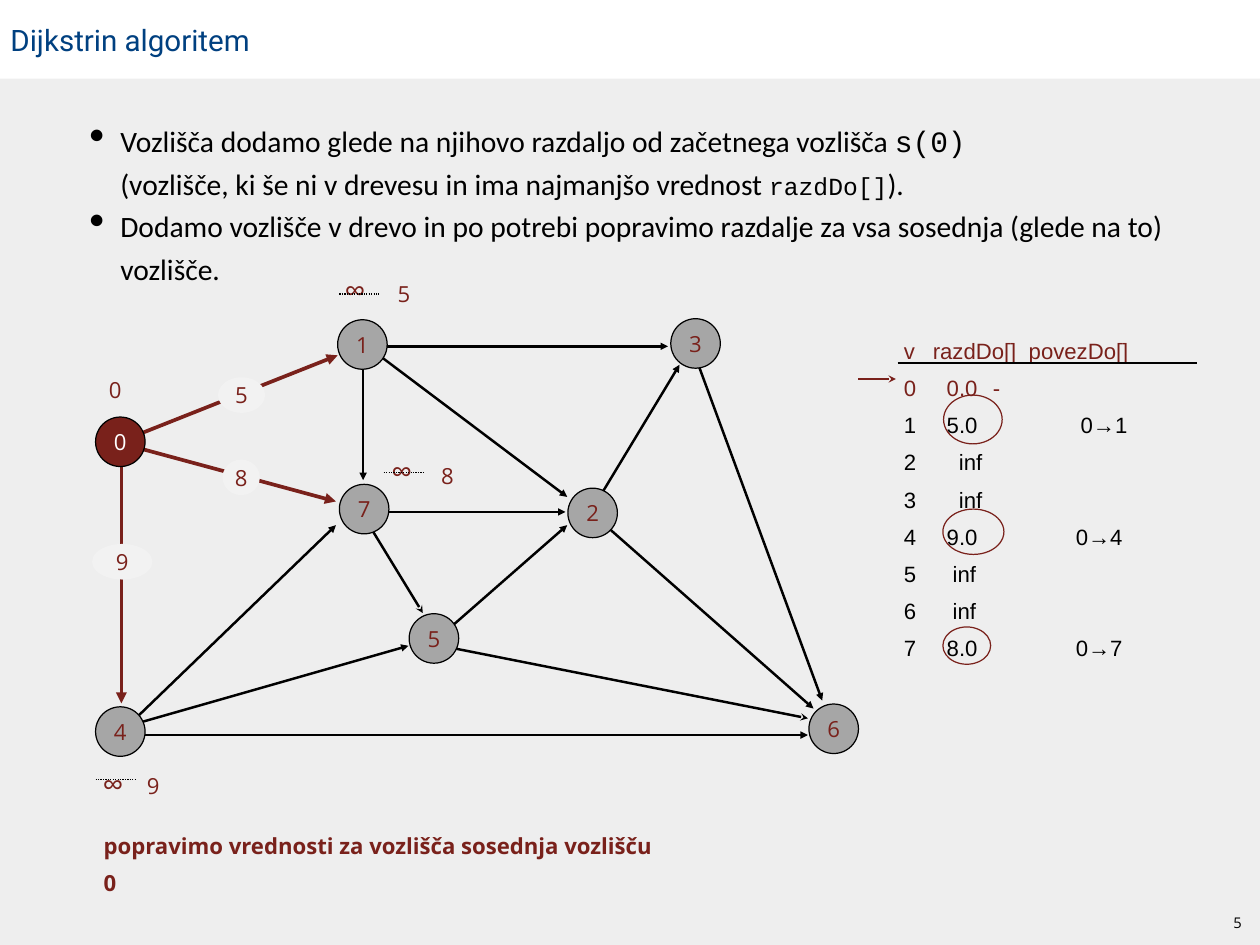
"""Build the slide on Dijkstra's algorithm: the graph, its distances and the table."""
from lxml import etree
from pptx import Presentation
from pptx.dml.color import RGBColor
from pptx.enum.dml import MSO_LINE
from pptx.enum.shapes import MSO_CONNECTOR, MSO_SHAPE
from pptx.enum.text import MSO_ANCHOR, PP_ALIGN
from pptx.oxml.ns import qn
from pptx.util import Cm, Pt

STRAIGHT = MSO_CONNECTOR.STRAIGHT
RECTANGLE, OVAL = MSO_SHAPE.RECTANGLE, MSO_SHAPE.OVAL
TOP, MIDDLE = MSO_ANCHOR.TOP, MSO_ANCHOR.MIDDLE
LEFT, CENTER = PP_ALIGN.LEFT, PP_ALIGN.CENTER
DOTTED = MSO_LINE.ROUND_DOT

BLACK = RGBColor(0x00, 0x00, 0x00)
WHITE = RGBColor(0xFF, 0xFF, 0xFF)
PAPER = RGBColor(0xEE, 0xEE, 0xEE)
PALE = RGBColor(0xF2, 0xF2, 0xF2)
GREY = RGBColor(0xA6, 0xA6, 0xA6)
RED = RGBColor(0x79, 0x21, 0x1B)
BLUE = RGBColor(0x00, 0x40, 0x80)

SANS, TITLE_FONT, BODY, CODE, TABLE_FONT = (
    "Open Sans", "Roboto", "Calibri", "Courier New", "Arial")
WIDTH, HEIGHT = 36.12, 27.1
PAD = 0.15
NODE_SIZE = 1.42
WEIGHT_HEIGHT = 1.02
STRIKE_LENGTH = 1.14

TITLE = "Dijkstrin algoritem"
BULLETS = [
    [("Vozlišča dodamo glede na njihovo razdaljo od začetnega vozlišča ", BODY, 24),
     ("s(0)", CODE, 24),
     None,
     ("(vozlišče, ki še ni v drevesu in ima najmanjšo vrednost ", BODY, 24),
     ("razdDo[]", CODE, 20),
     (").", BODY, 24)],
    [("Dodamo vozlišče v drevo in po potrebi popravimo razdalje za vsa "
      "sosednja (glede na to) vozlišče.", BODY, 24)],
]
CAPTION = "popravimo vrednosti za vozlišča sosednja vozlišču 0"
PAGE_NUMBER = "5"

NODES = {
    "4": (2.74, 20.27), "7": (9.73, 13.89), "1": (9.68, 9.17), "3": (19.23, 9.14),
    "5": (11.73, 17.6), "2": (16.28, 14.0), "6": (23.19, 20.19), "0": (2.74, 11.96),
}
START_NODE = "0"
EDGES = [
    (12.75, 18.54, 23.16, 20.6, "stealth"),
    (3.58, 20.9, 9.63, 15.06, "triangle"),
    (10.29, 14.68, 16.21, 14.68, "triangle"),
    (10.41, 9.86, 10.41, 13.77, "triangle"),
    (19.89, 10.11, 23.57, 20.09, "triangle"),
    (16.81, 14.88, 19.48, 10.46, "triangle"),
    (17.35, 15.06, 23.32, 20.32, "triangle"),
    (3.45, 21.08, 23.16, 21.08, "triangle"),
    (10.59, 9.98, 16.26, 14.25, "triangle"),
    (10.36, 9.93, 19.15, 9.93, "triangle"),
    (10.29, 14.58, 12.12, 17.58, "stealth"),
    (12.55, 18.31, 16.26, 15.06, "triangle"),
    (3.45, 20.88, 11.71, 18.52, "triangle"),
]
TREE_EDGES = [
    (3.48, 13.08, 3.48, 20.17),
    (3.53, 12.73, 9.63, 14.38),
    (3.61, 12.6, 9.68, 10.19),
]
WEIGHTS = [("9", 2.64, 15.6, 1.73), ("8", 6.38, 13.18, 1.07), ("5", 6.25, 10.82, 1.35)]
DISTANCES = [
    ("∞", 9.73, 7.8, 24, 1.0), ("∞", 11.07, 13.0, 24, 1.0), ("∞", 2.79, 21.56, 24, 1.4),
    ("5", 11.25, 8.05, 18, 1.0), ("0", 2.97, 10.8, 18, 1.0),
    ("8", 12.5, 13.26, 18, 1.0), ("9", 4.06, 21.84, 18, 1.4),
]
STRIKES = [(9.73, 8.43), (11.0, 13.56), (2.74, 22.35)]

ROWS = [
    ("v\trazdDo[]\tpovezDo[]", (0.83, 3.58), RED),
    ("0\t0.0\t-", (1.23, 2.55), RED),
    ("1\t5.0\t0→1", (1.23, 5.07), BLACK),
    ("2\tinf", (1.58,), BLACK),
    ("3\tinf", (1.58,), BLACK),
    ("4\t9.0\t0→4", (1.23, 4.93), BLACK),
    ("5\tinf", (1.4,), BLACK),
    ("6\tinf", (1.4,), BLACK),
    ("7\t8.0\t0→7", (1.23, 4.93), BLACK),
]
RINGS = [(27.03, 17.98, 1.37, 1.07), (27.03, 14.6, 1.75, 1.3), (27.05, 11.33, 1.68, 1.4)]


def style(span, font, size, color, bold=False):
    span.font.name, span.font.size, span.font.bold = font, Pt(size), bold
    span.font.color.rgb = color


def set_frame(frame, anchor=TOP, pad_left=PAD, pad_top=0, pad_right=0):
    frame.word_wrap = True
    frame.vertical_anchor = anchor
    frame.margin_left, frame.margin_right = Cm(pad_left), Cm(pad_right)
    frame.margin_top, frame.margin_bottom = Cm(pad_top), Cm(0)


def write(shape, text, font, size, color, align=LEFT, spacing=1.0, bold=False):
    shape.text_frame.text = text
    para = shape.text_frame.paragraphs[0]
    para.alignment, para.line_spacing = align, spacing
    style(para.runs[0], font, size, color, bold)


def add_box(page, left, top, width, height, **frame_options):
    box = page.shapes.add_textbox(Cm(left), Cm(top), Cm(width), Cm(height))
    set_frame(box.text_frame, **frame_options)
    return box


def add_figure(page, kind, left, top, width, height, fill=None, outline=None):
    shape = page.shapes.add_shape(kind, Cm(left), Cm(top), Cm(width), Cm(height))
    shape.shadow.inherit = False
    for part, color in ((shape.fill, fill), (shape.line.fill, outline)):
        if color is None:
            part.background()
        else:
            part.solid()
            part.fore_color.rgb = color
    if outline is not None:
        shape.line.width = Pt(1)
    return shape


def add_disc(page, text, place, fill, outline=None, color=RED):
    disc = add_figure(page, OVAL, *place, fill, outline)
    set_frame(disc.text_frame, anchor=MIDDLE, pad_left=0)
    write(disc, text, SANS, 18, color, align=CENTER)


def add_line(page, x1, y1, x2, y2, color, width, head=None, dash=None):
    line = page.shapes.add_connector(STRAIGHT, Cm(x1), Cm(y1), Cm(x2), Cm(y2))
    line.line.color.rgb, line.line.width = color, Pt(width)
    if dash:
        line.line.dash_style = dash
    properties = line._element.spPr
    if head:
        etree.SubElement(properties.find(qn("a:ln")), qn("a:tailEnd"), type=head)
    etree.SubElement(properties, qn("a:effectLst"))


def add_bullets(page):
    box = add_box(page, 2.26, 3.18, 31.6, 5.2, pad_top=PAD, pad_right=0.46)
    frame = box.text_frame
    for index, spans in enumerate(BULLETS):
        para = frame.add_paragraph() if index else frame.paragraphs[0]
        para.line_spacing = 1.2
        for item in spans:
            if item is None:
                para.add_line_break()
                continue
            text, font, size = item
            span = para.add_run()
            span.text = text
            style(span, font, size, BLACK)
        properties = para._p.get_or_add_pPr()
        properties.set("marL", str(Cm(1.04)))
        properties.set("indent", str(Cm(-0.89)))
        etree.SubElement(properties, qn("a:buSzPct"), val="150000")
        etree.SubElement(properties, qn("a:buChar"), char="•")


def add_rows(page):
    frame = add_box(page, 25.76, 9.37, 6.83, 9.7).text_frame
    frame.text = "\n".join(text for text, _, _ in ROWS)
    for para, (_, stops, color) in zip(frame.paragraphs, ROWS):
        para.line_spacing = 1.4
        for span in para.runs:
            style(span, TABLE_FONT, 18, color)
        tabs = etree.SubElement(para._p.get_or_add_pPr(), qn("a:tabLst"))
        for stop in stops:
            etree.SubElement(tabs, qn("a:tab"), pos=str(Cm(stop)), algn="l")


def main():
    deck = Presentation()
    deck.slide_width, deck.slide_height = Cm(WIDTH), Cm(HEIGHT)
    page = deck.slides.add_slide(deck.slide_layouts[6])
    page.background.fill.solid()
    page.background.fill.fore_color.rgb = PAPER

    title = add_figure(page, RECTANGLE, 0, 0, WIDTH, 2.26, WHITE)
    set_frame(title.text_frame, anchor=MIDDLE, pad_left=2 * PAD)
    write(title, TITLE, TITLE_FONT, 24, BLUE)
    add_bullets(page)

    for *ends, head in EDGES:
        add_line(page, *ends, BLACK, 2, head)
    for ends in TREE_EDGES:
        add_line(page, *ends, RED, 3, "triangle")
    for name, (left, top) in NODES.items():
        fill, color = (RED, WHITE) if name == START_NODE else (GREY, RED)
        add_disc(page, name, (left, top, NODE_SIZE, NODE_SIZE), fill, BLACK, color)
    for text, left, top, width in WEIGHTS:
        add_disc(page, text, (left, top, width, WEIGHT_HEIGHT), PALE)
    for text, left, top, size, spacing in DISTANCES:
        box = add_box(page, left, top, 1.19, 1.27)
        write(box, text, SANS, size, RED, spacing=spacing)
    for left, top in STRIKES:
        add_line(page, left, top, left + STRIKE_LENGTH, top, BLACK, 1, dash=DOTTED)

    add_rows(page)
    add_line(page, 25.73, 10.41, 34.32, 10.41, BLACK, 1)
    add_line(page, 24.61, 10.87, 25.68, 10.87, RED, 2, "stealth")
    for place in RINGS:
        add_figure(page, OVAL, *place, outline=RED)

    caption = add_box(page, 2.82, 23.57, 16.38, 2.2)
    write(caption, CAPTION, SANS, 18, RED, spacing=1.4, bold=True)
    number = add_box(page, 35.05, 26.04, 0.86, 0.81, anchor=MIDDLE, pad_left=0)
    write(number, PAGE_NUMBER, SANS, 12, BLACK, align=CENTER)
    deck.save("out.pptx")


if __name__ == "__main__":
    main()
